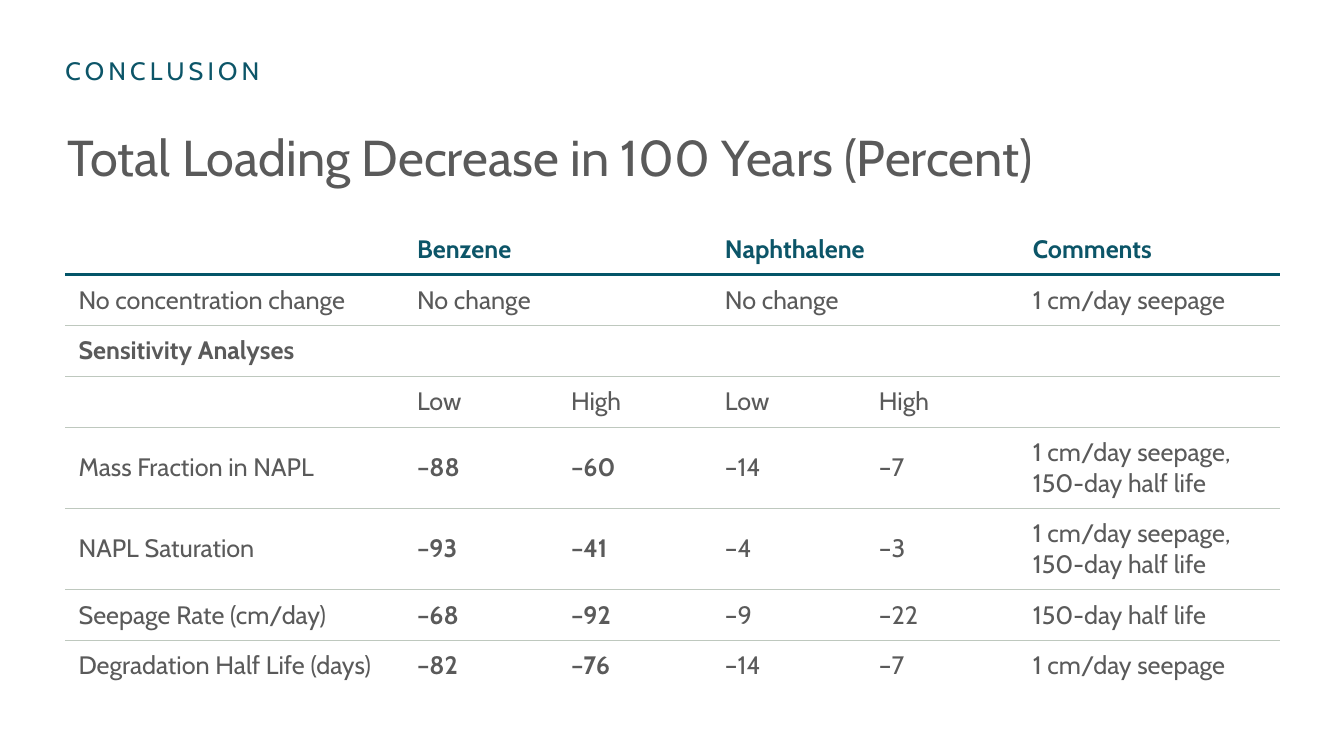
from dataclasses import dataclass

from lxml.etree import SubElement
from pptx import Presentation
from pptx.dml.color import RGBColor
from pptx.enum.text import MSO_ANCHOR, PP_ALIGN
from pptx.oxml.ns import qn
from pptx.slide import Slide
from pptx.table import _Cell
from pptx.text.text import TextFrame
from pptx.util import Cm, Pt

FONT = "Cabin"
COLORS = {"teal": "0C5568", "header_rule": "035568", "gray": "5A5A5A", "rule": "BEC8BE"}
COLUMN_WIDTHS = [8.53, 3.88, 3.88, 3.88, 3.88, 6.55]
SINGLE_HEIGHT = 1.28
DOUBLE_HEIGHT = 2.05
SEEPAGE = "1 cm/day seepage"
HALF_LIFE = "150-day half life"
BOTH = f"{SEEPAGE},\n{HALF_LIFE}"


@dataclass(frozen=True)
class Row:
    texts: tuple[str, ...]
    spans: tuple[tuple[int, int], ...] = ()
    bold_columns: tuple[int, ...] = ()
    color: str = "gray"
    height: float = SINGLE_HEIGHT


@dataclass(frozen=True)
class Rule:
    color: str
    width: float


THICK = Rule("header_rule", 2.25)
THIN = Rule("rule", 0.5)
PAIRS = ((1, 2), (3, 4))
ROWS = [
    Row(("", "Benzene", "", "Naphthalene", "", "Comments"), PAIRS, (1, 3, 5), "teal"),
    Row(("No concentration change", "No change", "", "No change", "", SEEPAGE), PAIRS),
    Row(("Sensitivity Analyses", "", "", "", "", ""), ((0, 5),), (0,)),
    Row(("", "Low", "High", "Low", "High", "")),
    Row(("Mass Fraction in NAPL", "–88", "–60", "–14", "–7", BOTH),
        bold_columns=(1, 2), height=DOUBLE_HEIGHT),
    Row(("NAPL Saturation", "–93", "–41", "–4", "–3", BOTH),
        bold_columns=(1, 2), height=DOUBLE_HEIGHT),
    Row(("Seepage Rate (cm/day)", "–68", "–92", "–9", "–22", HALF_LIFE), bold_columns=(1, 2)),
    Row(("Degradation Half Life (days)", "–82", "–76", "–14", "–7", SEEPAGE),
        bold_columns=(1, 2)),
]


def write_text(text_frame: TextFrame, text: str, *, size: float = 18, color: str = "gray",
               bold: bool = False, spacing: float = 0) -> None:
    paragraph = text_frame.paragraphs[0]
    paragraph.text = text
    paragraph.alignment = PP_ALIGN.LEFT
    for run in paragraph.runs:
        run.font.name = FONT
        run.font.size = Pt(size)
        run.font.bold = bold
        run.font.color.rgb = RGBColor.from_string(COLORS[color])
        if spacing:
            run._r.get_or_add_rPr().set("spc", str(int(spacing * 100)))


def set_frame(text_frame: TextFrame, vertical_margin: float) -> None:
    text_frame.word_wrap = True
    text_frame.vertical_anchor = MSO_ANCHOR.MIDDLE
    text_frame.margin_left = text_frame.margin_right = 0
    text_frame.margin_top = text_frame.margin_bottom = Cm(vertical_margin)


def set_borders(cell: _Cell, top: Rule | None, bottom: Rule | None) -> None:
    properties = cell._tc.get_or_add_tcPr()
    for side, rule in (("L", None), ("R", None), ("T", top), ("B", bottom)):
        line = SubElement(properties, qn(f"a:ln{side}"))
        if rule is None:
            SubElement(line, qn("a:noFill"))
        else:
            line.set("w", str(int(Pt(rule.width))))
            fill = SubElement(line, qn("a:solidFill"))
            SubElement(fill, qn("a:srgbClr"), val=COLORS[rule.color])


def rule_below(row_index: int) -> Rule | None:
    if row_index < 0 or row_index == len(ROWS) - 1:
        return None
    return THICK if row_index == 0 else THIN


def add_results_table(slide: Slide) -> None:
    total_height = sum(row.height for row in ROWS)
    shape = slide.shapes.add_table(len(ROWS), len(COLUMN_WIDTHS), Cm(1.65), Cm(5.64),
                                   Cm(sum(COLUMN_WIDTHS)), Cm(total_height))
    table = shape.table
    table.first_row = table.horz_banding = False
    for column, width in zip(table.columns, COLUMN_WIDTHS):
        column.width = Cm(width)
    for row_index, row in enumerate(ROWS):
        table.rows[row_index].height = Cm(row.height)
        for column_index, text in enumerate(row.texts):
            cell = table.cell(row_index, column_index)
            set_borders(cell, rule_below(row_index - 1), rule_below(row_index))
            cell.fill.background()
            cell.vertical_anchor = MSO_ANCHOR.MIDDLE
            cell.margin_left = cell.margin_right = Cm(0.33)
            cell.margin_top = cell.margin_bottom = Cm(0.25)
            if text:
                write_text(cell.text_frame, text, color=row.color,
                           bold=column_index in row.bold_columns)
        for first, last in row.spans:
            table.cell(row_index, first).merge(table.cell(row_index, last))


def main() -> None:
    presentation = Presentation()
    presentation.slide_width = Cm(33.87)
    presentation.slide_height = Cm(19.05)
    slide = presentation.slides.add_slide(presentation.slide_layouts[5])

    section = slide.shapes.add_textbox(Cm(1.65), Cm(1.4), Cm(16.51), Cm(0.76))
    set_frame(section.text_frame, 0)
    write_text(section.text_frame, "CONCLUSION", color="teal", spacing=3)

    title = slide.shapes.title
    title.left, title.top, title.width, title.height = Cm(1.7), Cm(3), Cm(30.53), Cm(1.9)
    set_frame(title.text_frame, 0.13)
    write_text(title.text_frame, "Total Loading Decrease in 100 Years (Percent)", size=36)

    add_results_table(slide)
    presentation.save("out.pptx")


if __name__ == "__main__":
    main()
